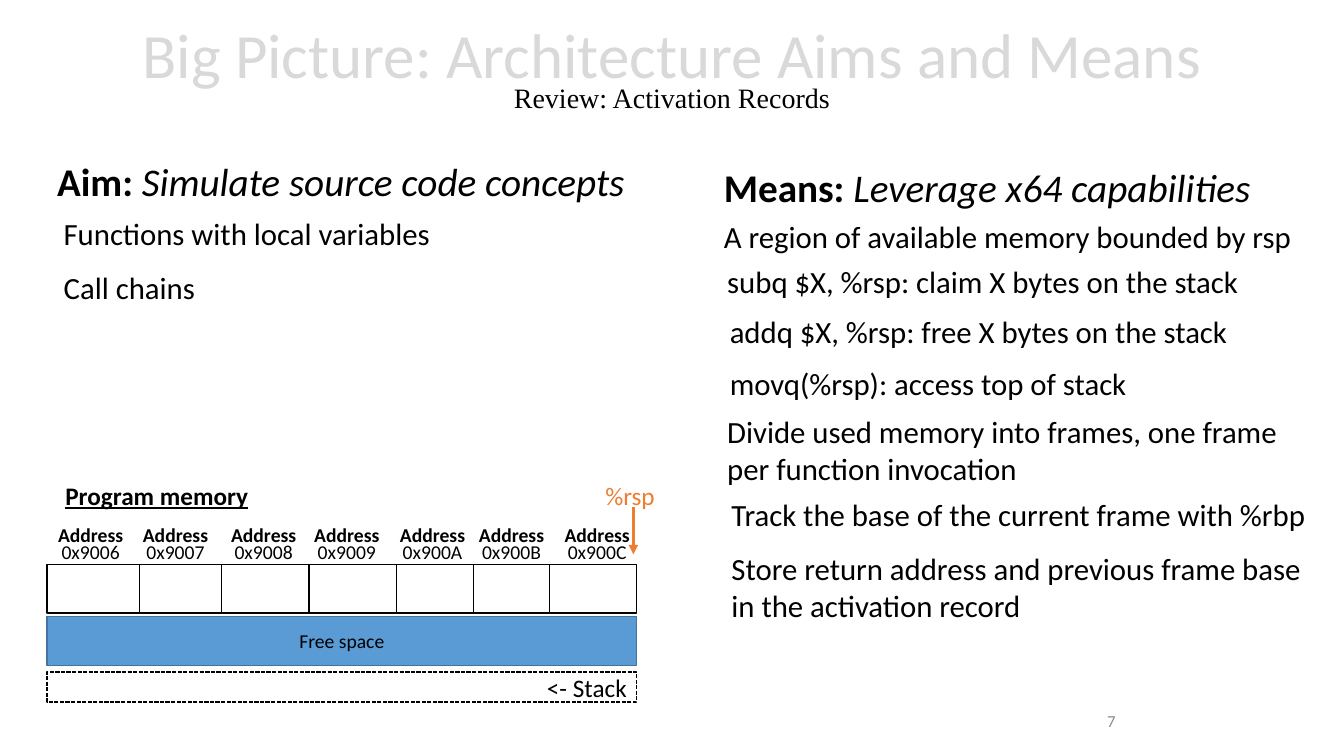
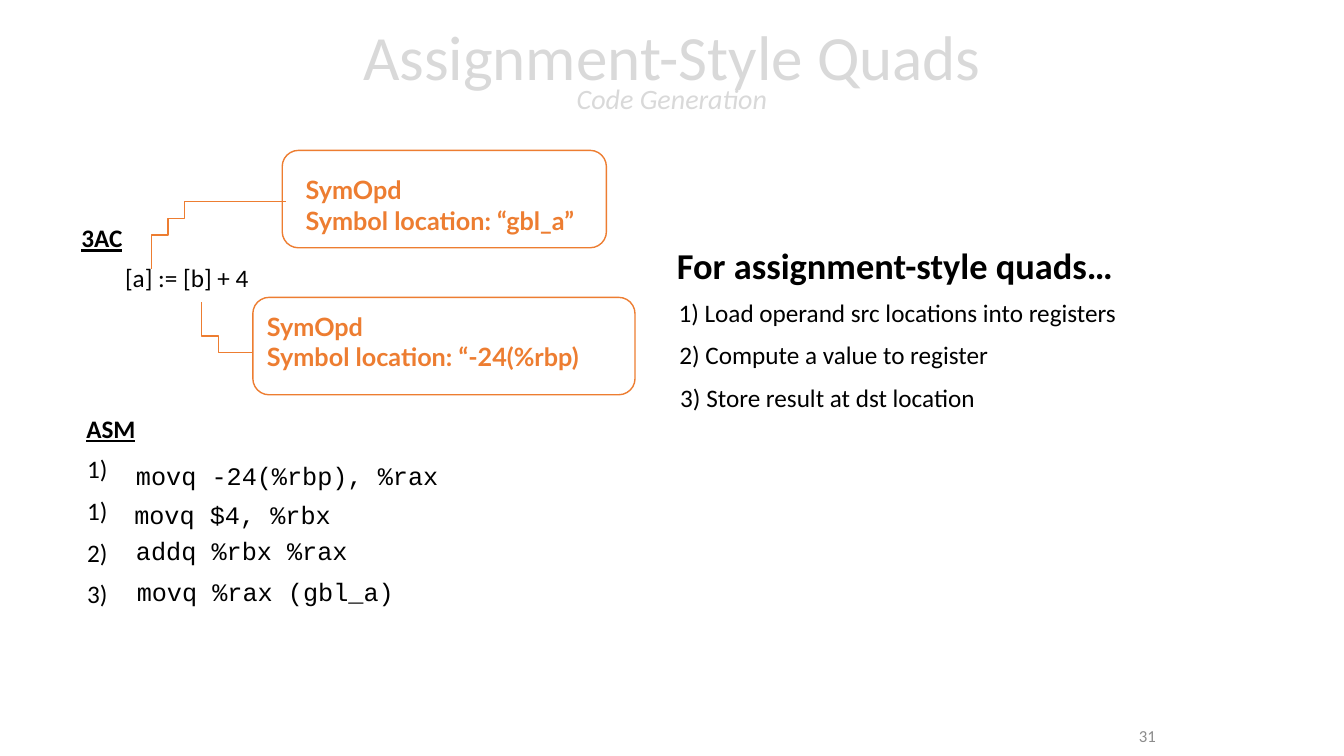
from lxml.etree import SubElement
from pptx import Presentation
from pptx.dml.color import RGBColor
from pptx.enum.dml import MSO_LINE
from pptx.enum.shapes import MSO_CONNECTOR, MSO_SHAPE
from pptx.enum.text import MSO_ANCHOR, MSO_AUTO_SIZE, PP_ALIGN
from pptx.oxml.ns import qn
from pptx.util import Inches, Pt

COLS, ROWS = 80, 45
UNIT = Inches(7.5) / ROWS
BLACK, WHITE, PALE, GREY = "000000", "FFFFFF", "D9D9D9", "8C8C8C"
ORANGE, BLUE, NAVY = "ED7D31", "5B9BD5", "43739E"
LEFT, CENTER, RIGHT = PP_ALIGN.LEFT, PP_ALIGN.CENTER, PP_ALIGN.RIGHT


def grid(*cells):
    return [round(cell * UNIT) for cell in cells]


def color(hex_code):
    return RGBColor.from_string(hex_code)


def style(r, size, hex_code=BLACK, font="Calibri", bold=False, italic=False, underline=False):
    f = r.font
    f.size, f.name = Pt(size), font
    f.bold, f.italic, f.underline = bold, italic, underline
    f.color.rgb = color(hex_code)


def place(sp, x, y, w, h):
    sp.left, sp.top, sp.width, sp.height = grid(x, y, w, h)


def fill_text(tf, text, size, align=LEFT, **look):
    tf.word_wrap = True
    tf.text = text
    for p in tf.paragraphs:
        p.alignment = align
        for r in p.runs:
            style(r, size, **look)


def label(s, text, x, y, w=35.3, h=2.4, size=18, align=LEFT, inset=0.6, **look):
    sp = s.shapes.add_textbox(*grid(x, y, w, h))
    tf = sp.text_frame
    tf.margin_left, tf.margin_right = grid(inset, inset)
    fill_text(tf, text, size, align, **look)
    return sp


def heading(tf, lead, rest):
    p = tf.paragraphs[0]
    for text, bold in ((lead, True), (rest, False)):
        r = p.add_run()
        r.text = text
        style(r, 28, bold=bold, italic=not bold)
    return p


def outline(sp, hex_code):
    sp.line.color.rgb = color(hex_code)
    sp.line.width = Pt(1)
    sp.shadow.inherit = False


def box(s, x, y, w, h, line=BLACK, fill=WHITE, kind=MSO_SHAPE.RECTANGLE):
    sp = s.shapes.add_shape(kind, *grid(x, y, w, h))
    if fill:
        sp.fill.solid()
        sp.fill.fore_color.rgb = color(fill)
    else:
        sp.fill.background()
    outline(sp, line)
    sp.text_frame.vertical_anchor = MSO_ANCHOR.MIDDLE
    return sp


def arrow(s, x1, y1, x2, y2):
    cn = s.shapes.add_connector(MSO_CONNECTOR.STRAIGHT, *grid(x1, y1, x2, y2))
    cn.line.color.rgb = color(ORANGE)
    cn.line.width = Pt(2.25)
    SubElement(cn.line._get_or_add_ln(), qn("a:tailEnd"), type="triangle")
    SubElement(cn._element.spPr, qn("a:effectLst"))


def bezier(points, t):
    weights = ((1 - t) ** 3, 3 * t * (1 - t) ** 2, 3 * t ** 2 * (1 - t), t ** 3)
    return tuple(sum(k * pt[axis] for k, pt in zip(weights, points)) for axis in (0, 1))


def curve(s, *points, steps=20):
    fb = s.shapes.build_freeform(*points[0], scale=UNIT)
    path_points = [bezier(points[i:i + 4], n / steps)
                   for i in range(0, len(points) - 1, 3)
                   for n in range(1, steps + 1)]
    fb.add_line_segments(path_points, close=False)
    sp = fb.convert_to_shape()
    sp.fill.background()
    outline(sp, ORANGE)


def new_slide(prs, layout, title, subtitle, title_box, number, number_box, **sub_look):
    s = prs.slides.add_slide(prs.slide_layouts[layout])
    sp = s.shapes.title
    place(sp, *title_box)
    tf = sp.text_frame
    tf.auto_size = MSO_AUTO_SIZE.NONE
    tf.vertical_anchor = MSO_ANCHOR.MIDDLE
    fill_text(tf, f"{title}\v{subtitle}", 45, CENTER, hex_code=PALE)
    p = tf.paragraphs[0]
    p.line_spacing = 0.7
    style(p.runs[1], 20, **sub_look)
    page = label(s, number, *number_box, size=12, align=RIGHT, hex_code=GREY)
    page.text_frame.vertical_anchor = MSO_ANCHOR.MIDDLE
    return s


def aim_body(s):
    sp = s.placeholders[1]
    place(sp, 2.8, 9.4, 36.4, 7.7)
    tf = sp.text_frame
    tf.auto_size = MSO_AUTO_SIZE.NONE
    p = heading(tf, "Aim: ", "Simulate source code concepts")
    p.line_spacing, p.space_before = 0.9, Pt(10)
    pPr = p._p.get_or_add_pPr()
    pPr.set("marL", "0")
    pPr.set("indent", "0")
    SubElement(pPr, qn("a:buNone"))


def memory(s):
    edges = (2.8, 8.3, 13.2, 18.4, 23.6, 28.2, 32.7, 37.9)
    centers = (5.4, 10.45, 15.7, 20.65, 25.75, 30.45, 35.55)
    left, width = edges[0], edges[-1] - edges[0]
    for i, (x, end, mid) in enumerate(zip(edges, edges[1:], centers)):
        box(s, x, 33.6, end - x, 2.9)
        for text, y, bold in (("Address", 30.8, True), (f"0x{0x9006 + i:X}", 31.85, False)):
            label(s, text, mid - 2.4, y, 4.8, 2.1, 14, CENTER, 0, bold=bold)
    free = box(s, left, 36.7, width, 2.9, NAVY, BLUE)
    fill_text(free.text_frame, "Free space", 14, CENTER)
    stack = box(s, left, 40, width, 1.8, fill=None)
    stack.line.dash_style = MSO_LINE.SQUARE_DOT
    fill_text(stack.text_frame, "<- Stack", 18, RIGHT)
    arrow(s, 37.7, 30.2, 37.7, 33)
    label(s, "%rsp", 35.3, 28.3, 4.4, align=CENTER, hex_code=ORANGE)
    label(s, "Program memory", 3.3, 28.3, 13.5, bold=True, underline=True)


def symbol_box(s, location, x, y, w, text_x, text_y):
    box(s, x, y, w, 5.8, ORANGE, kind=MSO_SHAPE.ROUNDED_RECTANGLE)
    label(s, f"SymOpd\nSymbol location: {location}", text_x, text_y, 22, 4.3,
          hex_code=ORANGE, font="Lato", bold=True)


def records_slide(prs):
    s = new_slide(prs, 1, "Big Picture: Architecture Aims and Means",
                  "Review: Activation Records", (0, 0.1, COLS, 8.7),
                  "7", (49, 41.7, 18, 2.4), font="Times New Roman")
    aim_body(s)
    means = label(s, "", 42.5, 9.4, h=3.4)
    heading(means.text_frame, "Means: ", "Leverage x64 capabilities")
    for text, x, y, w in (
        ("Functions with local variables", 3.2, 12.5, 35.3),
        ("Call chains", 3.2, 15.7, 35.3),
        ("A region of available memory bounded by rsp", 42.5, 12.65, 35.5),
        ("subq $X, %rsp: claim X bytes on the stack", 42.7, 15.35, 35.3),
        ("addq $X, %rsp: free X bytes on the stack", 42.85, 18.3, 35.3),
        ("movq(%rsp): access top of stack", 42.85, 21.4, 35.3),
        ("Divide used memory into frames, one frame per function invocation", 42.7, 24.25, 35.3),
        ("Track the base of the current frame with %rbp", 42.95, 29.2, 36.4),
        ("Store return address and previous frame base in the activation record",
         42.95, 32.4, 36.4),
    ):
        label(s, text, x, y, w, 2.8, 22)
    memory(s)


def quads_slide(prs):
    s = new_slide(prs, 5, "Assignment-Style Quads", "Code Generation", (10, 0.2, 60, 8.7),
                  "31", (55.9, 42.6, 13.5, 2.4), hex_code=PALE, italic=True)
    label(s, "3AC", 4.25, 12.95, 6, bold=True, underline=True)
    label(s, "[a] := [b] + 4", 6.85, 15.3, 10)
    label(s, "ASM", 4.55, 24.3, 6.3, bold=True, underline=True)
    for number, number_y, code, x, y in (
        ("1)", 26.7, "movq -24(%rbp), %rax", 7.5, 27.1),
        ("1)", 29.2, "movq $4, %rbx", 7.4, 29.45),
        ("2)", 31.7, "addq %rbx %rax", 7.5, 31.6),
        ("3)", 34.1, "movq %rax (gbl_a)", 7.55, 34),
    ):
        label(s, number, 4.6, number_y, 2.8)
        label(s, code, x, y, 22, font="Courier New")
    label(s, "For assignment-style quads…", 39.7, 14.15, h=3.2, size=26, bold=True)
    steps = ("1) Load operand src locations into registers",
             "2) Compute a value to register",
             "3) Store result at dst location")
    for i, step in enumerate(steps):
        label(s, step, 39.8 + 0.05 * i, 17.4 + 2.52 * i)
    symbol_box(s, "“gbl_a”", 16.8, 8.95, 19.3, 17.6, 10.1)
    symbol_box(s, "“-24(%rbp)", 15.05, 17.7, 22.75, 15.3, 18.25)
    curve(s, (8.6, 15.8), (11.4, 9.5), (14, 13.6), (16.8, 11.9))
    curve(s, (11.95, 17.7), (12.25, 19.1), (12.5, 20.45), (13, 21),
          (13.55, 21.55), (14.3, 21.25), (15.05, 20.95))


def main():
    prs = Presentation()
    prs.slide_width, prs.slide_height = grid(COLS, ROWS)
    records_slide(prs)
    quads_slide(prs)
    prs.save("out.pptx")


if __name__ == "__main__":
    main()
